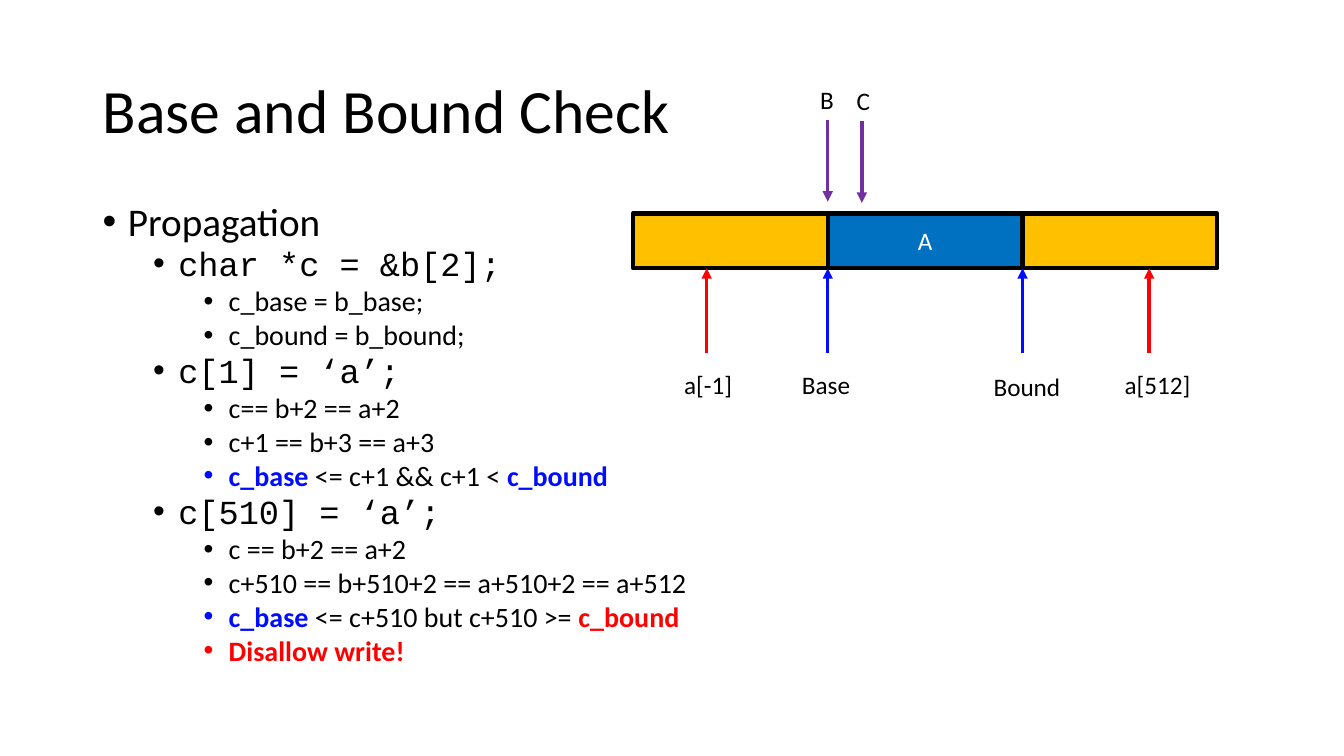
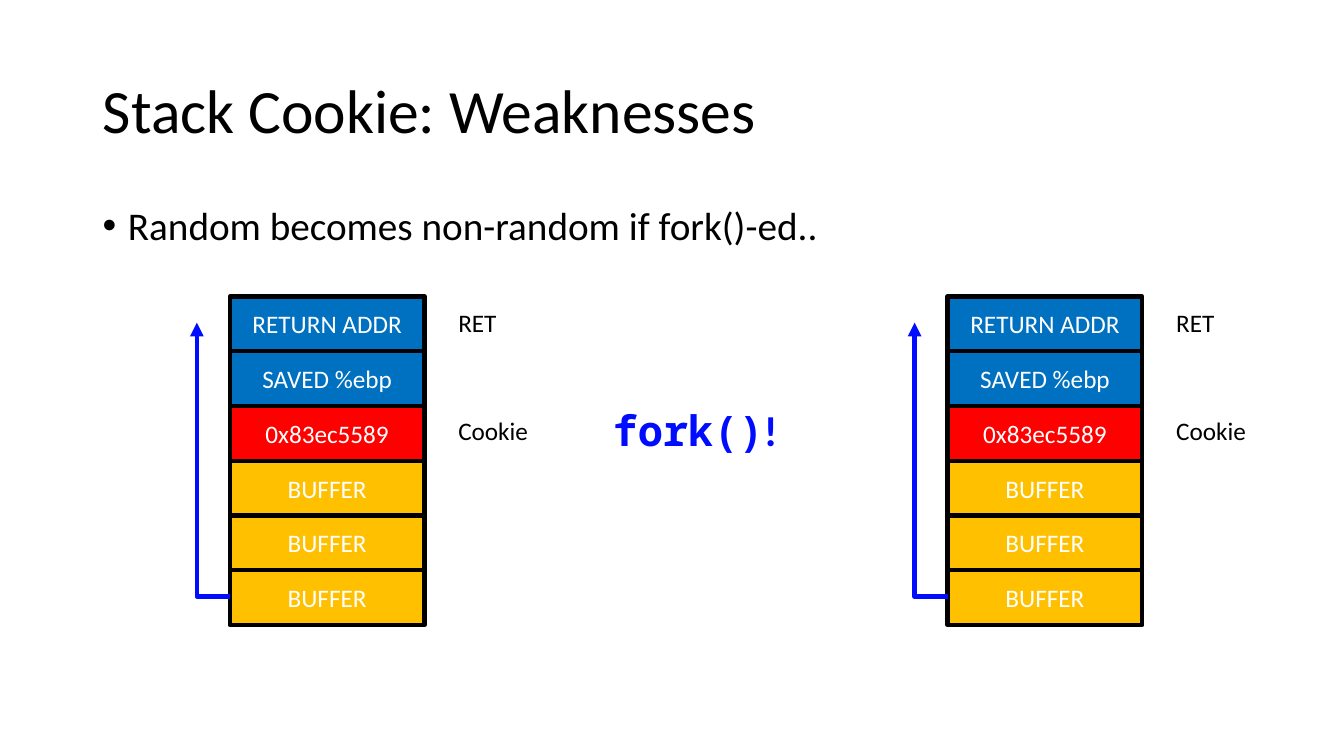
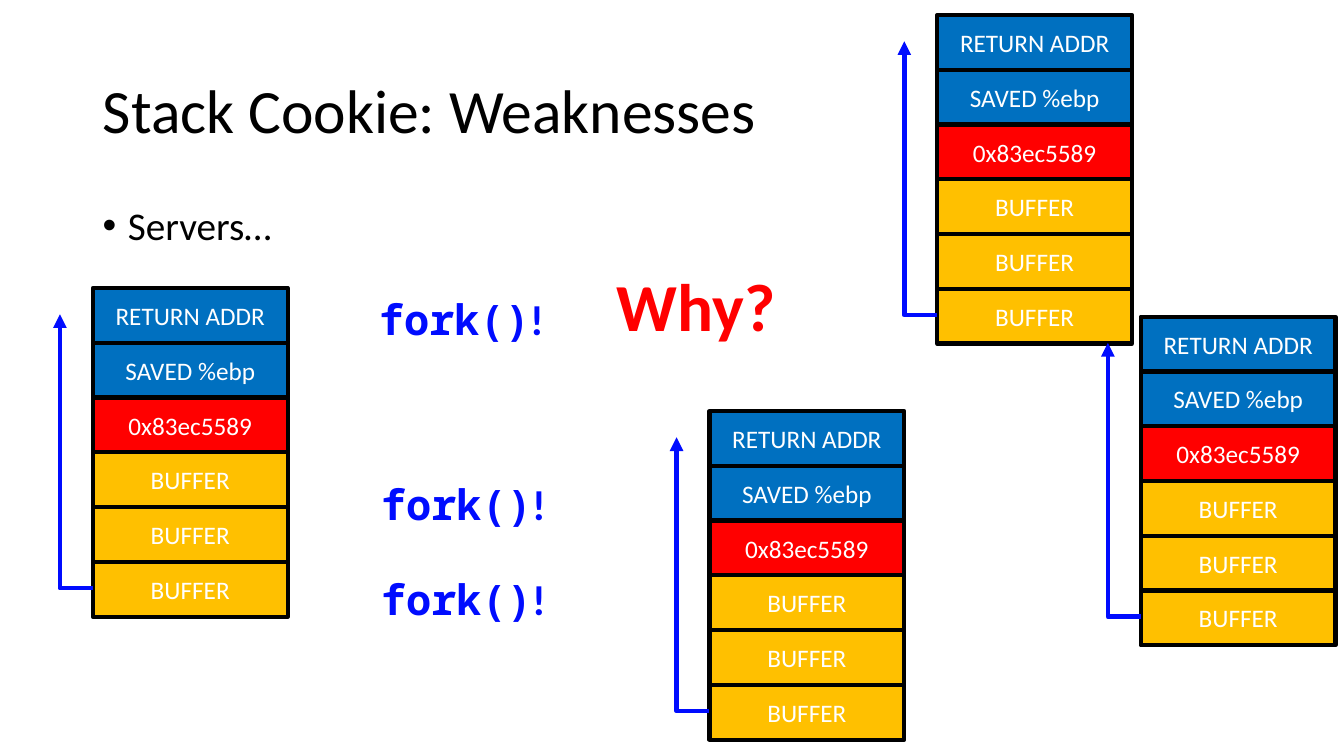
"""Build three slides on bound checks and stack cookies."""
from lxml import etree
from pptx import Presentation
from pptx.dml.color import RGBColor
from pptx.enum.shapes import MSO_CONNECTOR, MSO_SHAPE
from pptx.enum.text import MSO_ANCHOR, MSO_AUTO_SIZE, PP_ALIGN
from pptx.oxml.ns import qn
from pptx.util import Cm, Pt

COLORS = {"black": "000000", "white": "FFFFFF", "blue": "000CFF", "red": "FF0000",
          "purple": "7030A0", "cell": "0070C0", "gold": "FFC000"}
LEVELS = [(28, "Calibri", 10), (24, "Courier New", 5), (20, "Calibri", 5)]
CELL_W, CELL_H = 4.91, 1.38
LABEL_H = 1.02

BOUND_CHECK = [
    (0, [("Propagation", "black")]),
    (1, [("char *c = &b[2];", "black")]),
    (2, [("c_base = b_base;", "black")]),
    (2, [("c_bound = b_bound;", "black")]),
    (1, [("c[1] = ‘a’;", "black")]),
    (2, [("c== b+2 == a+2", "black")]),
    (2, [("c+1 == b+3 == a+3", "black")]),
    (2, [("c_base ", "blue"), ("<= c+1 && c+1 < ", "black"), ("c_bound", "blue")]),
    (1, [("c[510] = ‘a’;", "black")]),
    (2, [("c == b+2 == a+2", "black")]),
    (2, [("c+510 == b+510+2 == a+510+2 == a+512", "black")]),
    (2, [("c_base ", "blue"), ("<= c+510 but c+510 >= ", "black"), ("c_bound", "red")]),
    (2, [("Disallow write!", "red")]),
]
FORK_RANDOM = [(0, [("Random becomes non-random if fork()-ed..", "black")])]
SERVERS = [(0, [("Servers…", "black")])]

MEMORY = [("", "gold"), ("A", "cell"), ("", "gold")]
MEMORY_LEFT, MEMORY_TOP = 15.95, 5.38
POINTERS = [
    ("a[-1]", "red", 17.81, 8.89, 6.76, (16.99, 9.19, 1.73)),
    ("Base", "blue", 20.86, 8.89, 6.76, (19.96, 9.19, 1.73)),
    ("Bound", "blue", 25.77, 8.89, 6.76, (24.79, 9.22, 2.21)),
    ("a[512]", "red", 28.96, 8.89, 6.76, (28.09, 9.17, 2.18)),
    ("B", "purple", 20.86, 3.02, 5.08, (20.42, 2.01, 0.86)),
    ("C", "purple", 21.72, 3.05, 5.11, (21.34, 2.03, 0.86)),
]

STACK = [("RETURN ADDR", "cell"), ("SAVED %ebp", "cell"), ("0x83ec5589", "red"),
         ("BUFFER", "gold"), ("BUFFER", "gold"), ("BUFFER", "gold")]
STACK_LABELS = [("RET", 0.15, 1.47), ("Cookie", 2.87, 2.29)]
FORK_STACKS = [(5.79, 7.47), (23.88, 7.47)]
FORK_CALLS = [(15.19, 10.06)]
SERVER_STACKS = [(23.62, 0.38), (2.34, 7.26), (17.88, 10.36), (28.75, 7.98)]
SERVER_CALLS = [(9.3, 7.26), (9.35, 11.94), (9.35, 14.33)]


def rgb(color):
    return RGBColor.from_string(COLORS[color])


def add_run(p, text, color="black", **values):
    r = p.add_run()
    r.text = text
    for name, value in {"name": "Calibri", "size": Pt(18), "bold": False, **values}.items():
        setattr(r.font, name, value)
    r.font.color.rgb = rgb(color)


def add_label(s, left, top, width, height, runs):
    tf = s.shapes.add_textbox(Cm(left), Cm(top), Cm(width), Cm(height)).text_frame
    tf.word_wrap = False
    tf.auto_size = MSO_AUTO_SIZE.SHAPE_TO_FIT_TEXT
    for text, values in runs:
        add_run(tf.paragraphs[0], text, **values)


def add_cell(s, left, top, text, fill):
    sp = s.shapes.add_shape(MSO_SHAPE.RECTANGLE, Cm(left), Cm(top), Cm(CELL_W), Cm(CELL_H))
    sp.shadow.inherit = False
    sp.fill.solid()
    sp.fill.fore_color.rgb = rgb(fill)
    sp.line.color.rgb = rgb("black")
    sp.line.width = Pt(3)
    if text:
        p = sp.text_frame.paragraphs[0]
        p.alignment = PP_ALIGN.CENTER
        add_run(p, text, "white")


def add_arrow(s, kind, start, end, color, width):
    c = s.shapes.add_connector(kind, *map(Cm, start + end))
    c.line.color.rgb = rgb(color)
    c.line.width = Pt(width)
    etree.SubElement(c.line._get_or_add_ln(), qn("a:tailEnd"), type="triangle")
    etree.SubElement(c.element.spPr, qn("a:effectLst"))
    return c


def add_stack(s, left, top):
    for i, (text, fill) in enumerate(STACK):
        add_cell(s, left, top + i * CELL_H, text, fill)
    tip = top + 0.66
    c = add_arrow(s, MSO_CONNECTOR.ELBOW, (left - 0.83, tip),
                  (left, tip + 5 * CELL_H), "blue", 3.25)
    c.element.spPr.find(qn("a:prstGeom")).set("prst", "bentConnector2")
    c.element.spPr.find(qn("a:xfrm")).set("rot", "10800000")


def add_fork_call(s, left, top):
    style = {"color": "blue", "size": Pt(30), "bold": True}
    add_label(s, left, top, 4.7, 1.55,
              [("fork()", {**style, "name": "Noto Sans Mono"}), ("!", style)])


def add_bullets(s, items, spacing):
    tf = s.shapes.add_textbox(Cm(2.34), Cm(5.08), Cm(29.21), Cm(12.09)).text_frame
    tf.word_wrap = True
    for i, (level, runs) in enumerate(items):
        p = tf.add_paragraph() if i else tf.paragraphs[0]
        size, font, before = LEVELS[level]
        for name, value in {"level": level, "line_spacing": spacing,
                            "space_before": Pt(before)}.items():
            setattr(p, name, value)
        pPr = p._p.get_or_add_pPr()
        pPr.set("marL", str(Cm(0.635 + 1.27 * level)))
        pPr.set("indent", str(-Cm(0.635)))
        etree.SubElement(pPr, qn("a:buFont"), typeface="Arial")
        etree.SubElement(pPr, qn("a:buChar"), char="•")
        for text, color in runs:
            add_run(p, text, color, name=font, size=Pt(size), bold=color != "black")


def add_slide(prs, title, items, spacing=0.9):
    s = prs.slides.add_slide(prs.slide_layouts[5])
    sp = s.shapes.title
    for name, value in {"left": 2.34, "top": 1.02, "width": 29.21, "height": 3.68}.items():
        setattr(sp, name, Cm(value))
    sp.text_frame.vertical_anchor = MSO_ANCHOR.MIDDLE
    p = sp.text_frame.paragraphs[0]
    p.alignment = PP_ALIGN.LEFT
    p.line_spacing = 0.9
    add_run(p, title, size=Pt(44))
    add_bullets(s, items, spacing)
    return s


def build_bound_check(prs):
    s = add_slide(prs, "Base and Bound Check", BOUND_CHECK, 0.8)
    for i, (text, fill) in enumerate(MEMORY):
        add_cell(s, MEMORY_LEFT + i * CELL_W, MEMORY_TOP, text, fill)
    for text, color, x, start, end, place in POINTERS:
        add_arrow(s, MSO_CONNECTOR.STRAIGHT, (x, start), (x, end), color, 2.5)
        add_label(s, *place, LABEL_H, [(text, {})])


def build_weaknesses(prs, items, stacks, calls):
    s = add_slide(prs, "Stack Cookie: Weaknesses", items)
    for left, top in stacks:
        add_stack(s, left, top)
    for left, top in calls:
        add_fork_call(s, left, top)
    return s


def main():
    prs = Presentation()
    prs.slide_width, prs.slide_height = Cm(33.87), Cm(19.05)
    build_bound_check(prs)
    s = build_weaknesses(prs, FORK_RANDOM, FORK_STACKS, FORK_CALLS)
    for left, top in FORK_STACKS:
        for text, drop, width in STACK_LABELS:
            add_label(s, left + 5.51, top + drop, width, LABEL_H, [(text, {})])
    s = build_weaknesses(prs, SERVERS, SERVER_STACKS, SERVER_CALLS)
    add_label(s, 15.29, 6.53, 4.55, 2.31,
              [("Why?", {"color": "red", "size": Pt(48), "bold": True})])
    prs.save("out.pptx")


if __name__ == "__main__":
    main()
